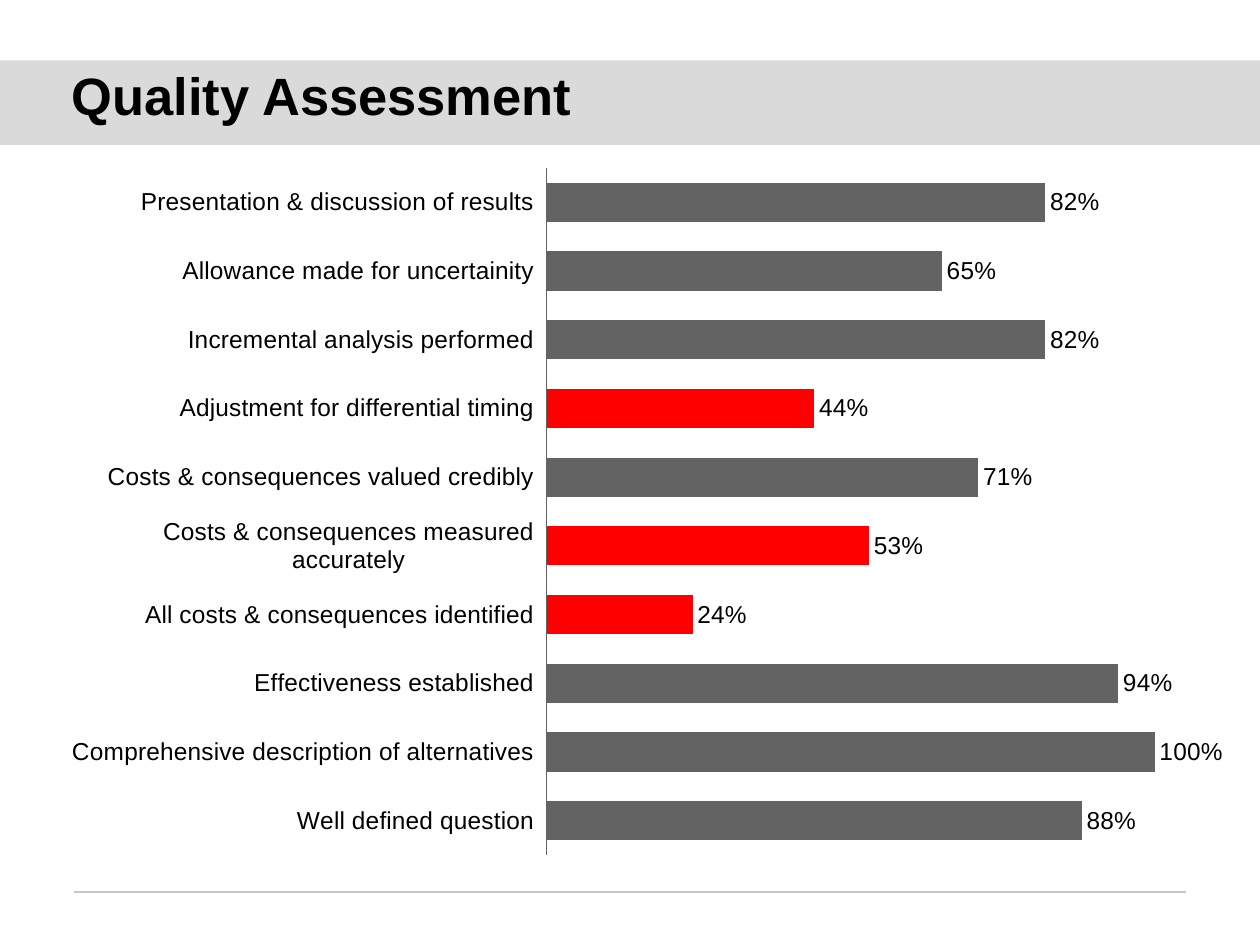
from lxml import etree
from pptx import Presentation
from pptx.chart.data import CategoryChartData
from pptx.dml.color import RGBColor
from pptx.enum.chart import XL_CHART_TYPE as ChartType, XL_LABEL_POSITION as LabelPosition
from pptx.enum.chart import XL_TICK_LABEL_POSITION as TickLabels, XL_TICK_MARK as TickMark
from pptx.enum.shapes import MSO_CONNECTOR as Connector, MSO_SHAPE as Shape
from pptx.enum.text import MSO_ANCHOR as Anchor, PP_ALIGN as Align
from pptx.oxml.ns import qn
from pptx.util import Inches, Pt

FONT = "Arial"
BLACK, GRAY, RED = "000000", "636363", "FF0000"
LOW_SCORE_LIMIT = 0.6
SCORES = {
    "Well defined question": 0.88,
    "Comprehensive description of alternatives": 1,
    "Effectiveness established": 0.94,
    "All costs & consequences identified": 0.24,
    "Costs & consequences measured accurately": 0.53,
    "Costs & consequences valued credibly": 0.71,
    "Adjustment for differential timing": 0.44,
    "Incremental analysis performed": 0.82,
    "Allowance made for uncertainity": 0.65,
    "Presentation & discussion of results": 0.82,
}


def color(value):
    return RGBColor.from_string(value)


def fill_solid(target, value):
    target.format.fill.solid()
    target.format.fill.fore_color.rgb = color(value)


def write_text(frame, text, size=14, bold=False, value=BLACK, spacing=1.0):
    frame.text = text
    paragraph = frame.paragraphs[0]
    paragraph.alignment = Align.LEFT
    paragraph.line_spacing = spacing
    font = paragraph.runs[0].font
    font.name, font.size, font.bold = FONT, Pt(size), bold
    font.color.rgb = color(value)


def add_header(slide, left, top, width, height):
    band = slide.shapes.add_shape(
        Shape.RECTANGLE, Inches(left), Inches(top), Inches(width), Inches(height))
    band.shadow.inherit = False
    band.fill.solid()
    band.fill.fore_color.rgb = color("DADADA")
    band.line.fill.background()

    title = slide.shapes.title
    title.left, title.top = Inches(left + 0.57), Inches(top + 0.08)
    title.width, title.height = Inches(8.84), Inches(0.45)
    frame = title.text_frame
    frame.margin_left = frame.margin_right = frame.margin_top = frame.margin_bottom = 0
    frame.vertical_anchor = Anchor.MIDDLE
    frame.word_wrap = True
    write_text(frame, "Quality Assessment", size=30, bold=True, spacing=0.9)
    band._element.addnext(title._element)


def add_footer_rule(slide, left, top, width):
    rule = slide.shapes.add_connector(
        Connector.STRAIGHT, Inches(left), Inches(top), Inches(left + width), Inches(top))
    rule.line.color.rgb = color("C6C6C6")
    rule.line.width = Pt(0.75)
    etree.SubElement(rule._element.spPr, qn("a:effectLst"))


def set_plot_box(chart, x, y, w, h):
    plot_area = chart._chartSpace.chart.plotArea
    for old_layout in plot_area.findall(qn("c:layout")):
        plot_area.remove(old_layout)
    layout = etree.Element(qn("c:layout"))
    manual = etree.SubElement(layout, qn("c:manualLayout"))
    settings = {"layoutTarget": "inner", "xMode": "edge", "yMode": "edge",
                "x": x, "y": y, "w": w, "h": h}
    for name, setting in settings.items():
        etree.SubElement(manual, qn(f"c:{name}")).set("val", str(setting))
    plot_area.insert(0, layout)


def add_score_chart(slide, left, top, width, height):
    data = CategoryChartData(number_format="0%")
    data.categories = SCORES.keys()
    data.add_series("Series 1", SCORES.values())
    chart = slide.shapes.add_chart(
        ChartType.BAR_CLUSTERED, Inches(left), Inches(top),
        Inches(width), Inches(height), data).chart
    chart.has_legend = chart.has_title = False
    chart.font.name, chart.font.size = FONT, Pt(14)
    chart.font.color.rgb = color(BLACK)
    set_plot_box(chart, 0.41, 0.02, 0.53, 0.96)

    category_axis, value_axis = chart.category_axis, chart.value_axis
    category_axis.major_tick_mark = category_axis.minor_tick_mark = TickMark.NONE
    category_axis.tick_label_position = TickLabels.LOW
    category_axis.format.line.color.rgb = color(GRAY)
    category_axis.format.line.width = Pt(0.75)
    value_axis.minimum_scale, value_axis.maximum_scale = 0, 1
    value_axis.has_major_gridlines = False
    value_axis.visible = False

    plot = chart.plots[0]
    plot.vary_by_categories = False
    plot.gap_width = 75
    plot.has_data_labels = True
    labels = plot.data_labels
    labels.show_value = True
    labels.number_format, labels.number_format_is_linked = "0%", False
    labels.position = LabelPosition.OUTSIDE_END

    series = plot.series[0]
    series.invert_if_negative = False
    fill_solid(series, GRAY)
    for index, score in enumerate(SCORES.values()):
        if score < LOW_SCORE_LIMIT:
            fill_solid(series.points[index], RED)


def main():
    presentation = Presentation()
    presentation.slide_width, presentation.slide_height = Inches(10), Inches(7.5)
    slide = presentation.slides.add_slide(presentation.slide_layouts[5])
    add_header(slide, 0, 0.48, 10, 0.67)
    add_footer_rule(slide, 0.59, 7.08, 8.82)
    add_score_chart(slide, 0.57, 1.22, 9.14, 5.68)
    presentation.save("out.pptx")


if __name__ == "__main__":
    main()
